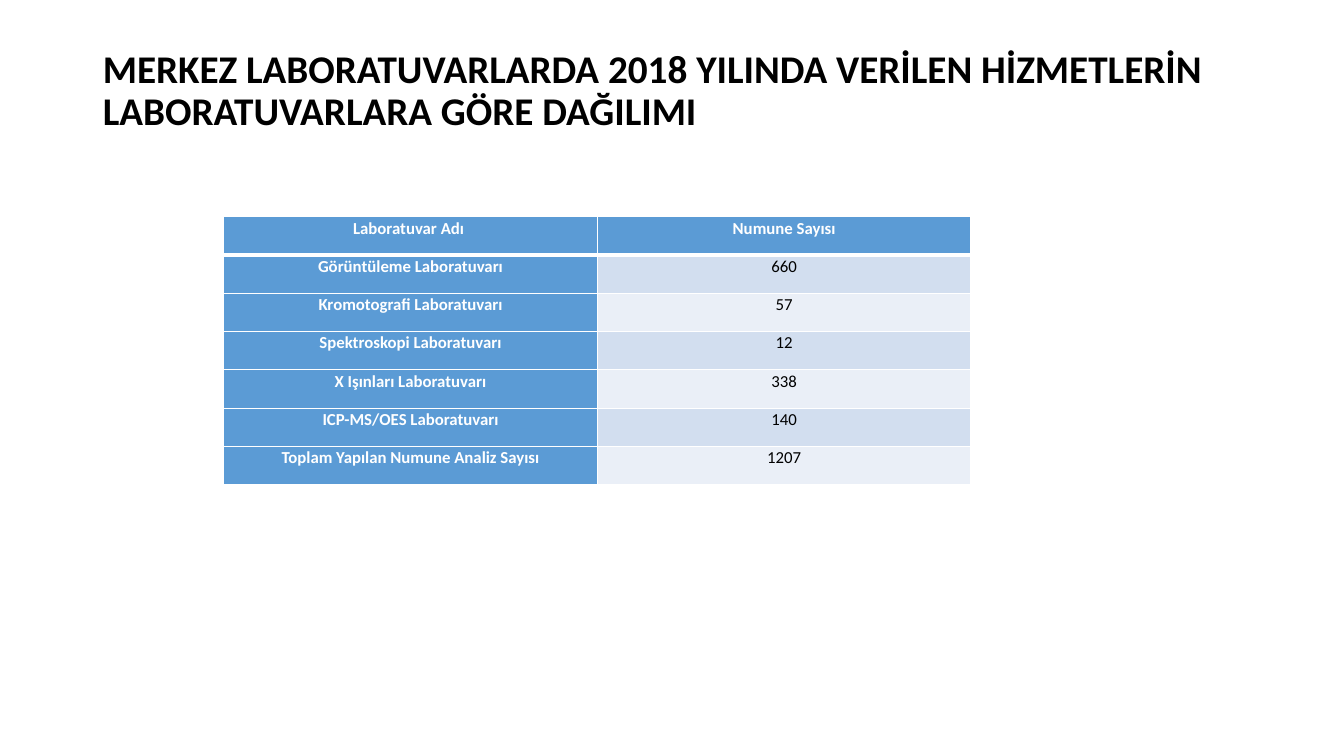
from lxml import etree
from pptx import Presentation, util as u
from pptx.dml.color import RGBColor
from pptx.enum import text
from pptx.oxml import ns

COLORS = {"ink": "000000", "white": "FFFFFF", "blue": "5B9BD5",
          "band": "D2DEEF", "pale": "EAEFF7"}
SLIDE = {"width": 13.33, "height": 7.5}
TITLE_BOX = (0.92, 0.4, 11.5, 1.45)
TABLE_BOX = (2.22, 2.15, 7.41, 2.66)
TITLE = "MERKEZ LABORATUVARLARDA 2018 YILINDA VERİLEN HİZMETLERİN LABORATUVARLARA GÖRE DAĞILIMI"
ROWS = [
    ("Laboratuvar Adı ", "Numune Sayısı"),
    ("Görüntüleme Laboratuvarı", "660"),
    ("Kromotografi Laboratuvarı", "57"),
    ("Spektroskopi Laboratuvarı", "12"),
    ("X Işınları Laboratuvarı", "338"),
    ("ICP-MS/OES Laboratuvarı", "140"),
    ("Toplam Yapılan Numune Analiz Sayısı", "1207"),
]
TITLE_FRAME = {"word_wrap": True, "auto_size": text.MSO_AUTO_SIZE.NONE,
               "vertical_anchor": text.MSO_ANCHOR.MIDDLE,
               "margin_bottom": u.Inches(0.48)}
TITLE_PARA = {"alignment": text.PP_ALIGN.LEFT, "line_spacing": 0.9}
CELL_FRAME = {"margin_left": u.Inches(0.07), "margin_right": u.Inches(0.07),
              "margin_top": 0, "margin_bottom": 0}
CELL_PARA = {"alignment": text.PP_ALIGN.CENTER, "line_spacing": 1.07}


def apply(target, values):
    for name, value in values.items():
        setattr(target, name, value)


def write(para, words, size, bold, color):
    span = para.add_run()
    span.text = words
    apply(span.font, {"name": "Calibri", "size": u.Pt(size), "bold": bold})
    span.font.color.rgb = RGBColor.from_string(COLORS[color])


def add_borders(cell, widths):
    properties = cell._tc.get_or_add_tcPr()
    for side, width in widths.items():
        line = etree.SubElement(properties, ns.qn(f"a:ln{side}"), w=str(u.Pt(width)))
        fill = etree.SubElement(line, ns.qn("a:solidFill"))
        etree.SubElement(fill, ns.qn("a:srgbClr"), val=COLORS["white"])


def add_title(page, box):
    title = page.shapes.title
    apply(title, dict(zip(("left", "top", "width", "height"), map(u.Inches, box))))
    apply(title.text_frame, TITLE_FRAME)
    para = title.text_frame.paragraphs[0]
    apply(para, TITLE_PARA)
    write(para, TITLE, 28, True, "ink")


def add_counts(page, box):
    frame = page.shapes.add_table(len(ROWS), len(ROWS[0]), *map(u.Inches, box))
    table = frame.table
    for r, values in enumerate(ROWS):
        for c, words in enumerate(values):
            cell = table.cell(r, c)
            heading = r == 0 or c == 0
            apply(cell, CELL_FRAME)
            add_borders(cell, {"L": 1, "R": 1, "T": 3 if r == 1 else 1,
                               "B": 3 if r == 0 else 1})
            cell.fill.solid()
            shade = "blue" if heading else "band" if r % 2 else "pale"
            cell.fill.fore_color.rgb = RGBColor.from_string(COLORS[shade])
            para = cell.text_frame.paragraphs[0]
            apply(para, CELL_PARA)
            write(para, words, 12, heading, "white" if heading else "ink")


def main():
    deck = Presentation()
    deck.slide_width = u.Inches(SLIDE["width"])
    deck.slide_height = u.Inches(SLIDE["height"])
    page = deck.slides.add_slide(deck.slide_layouts.get_by_name("Title Only"))
    add_title(page, TITLE_BOX)
    add_counts(page, TABLE_BOX)
    deck.save("out.pptx")


if __name__ == "__main__":
    main()
